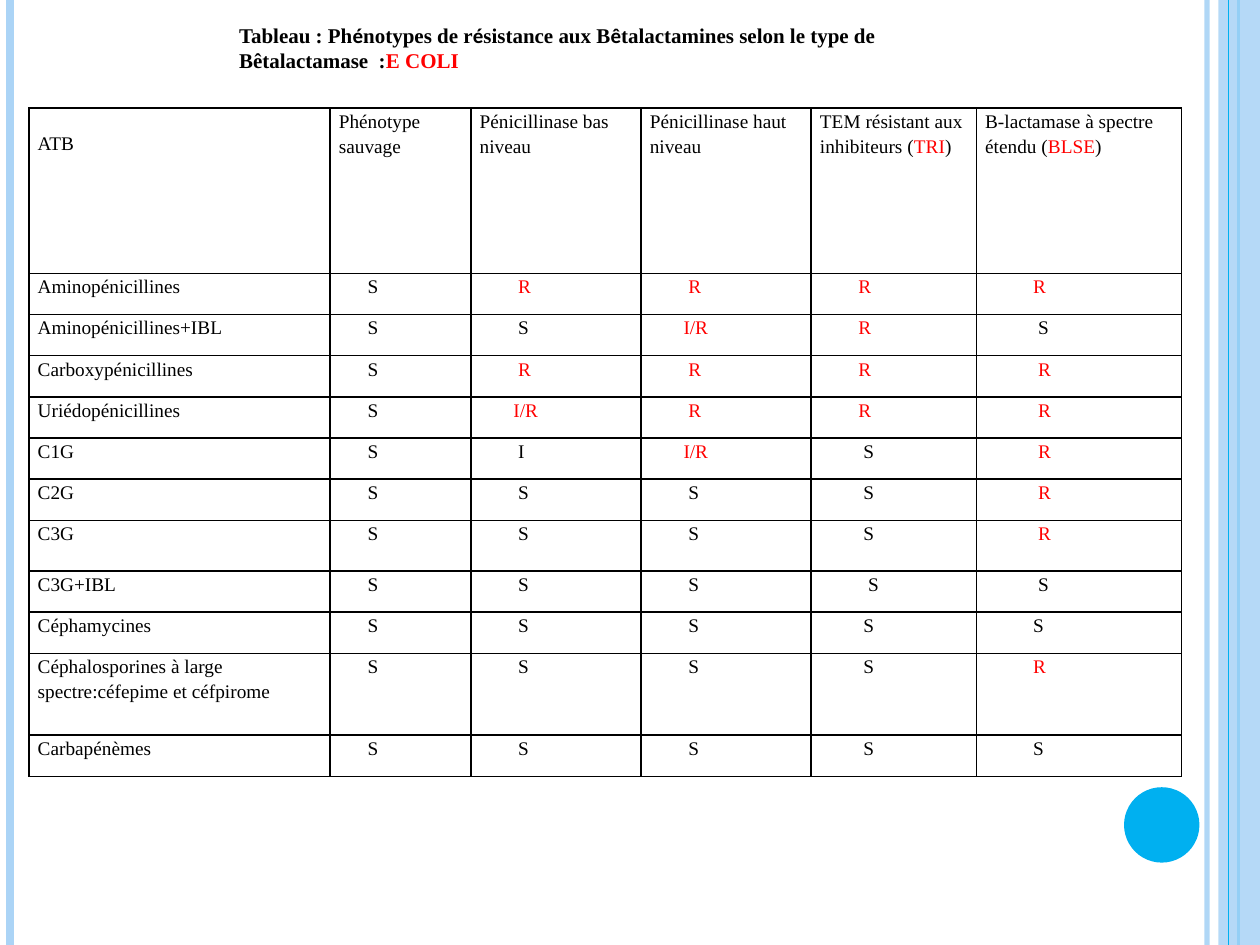
"""Build the slide with the table of E. coli beta-lactam resistance phenotypes."""
from lxml import etree
from pptx import Presentation
from pptx.dml.color import RGBColor
from pptx.enum.shapes import MSO_CONNECTOR, MSO_SHAPE
from pptx.oxml.ns import qn
from pptx.util import Cm, Pt

STRAIGHT = MSO_CONNECTOR.STRAIGHT
RECT, OVAL = MSO_SHAPE.RECTANGLE, MSO_SHAPE.OVAL
BLACK, RED, PALE, CYAN = "000000", "FF0000", "ABD4F6", "00B0F0"
SERIF, SANS = "Times New Roman", "Calibri"
W, H = 25.4, 19.05


def paint(fmt, color, alpha=100):
    fmt.solid()
    fmt.fore_color.rgb = RGBColor.from_string(color)
    if alpha < 100:
        clr = next(fmt._xPr.iter(qn("a:srgbClr")))
        etree.SubElement(clr, qn("a:alpha"), val=str(alpha * 1000))


def add_run(p, text, color=BLACK, **fmt):
    r = p.add_run()
    r.text = text
    paint(r.font.fill, color)
    for name, value in fmt.items():
        setattr(r.font, name, value)


prs = Presentation()
prs.slide_width, prs.slide_height = Cm(W), Cm(H)
s = prs.slides.add_slide(prs.slide_layouts[6])

bands = [
    ("line", 24.33, 3, PALE, 93),
    ("line", 0.2, 4.5, PALE, 100),
    ("line", 24.97, 1.5, CYAN, 100),
    (RECT, (24.56, 0, 0.84, H), 0, PALE, 87),
    ("line", 24.76, 0.75, CYAN, 100),
    (OVAL, (22.66, 15.87, 1.52, 1.52), 0, CYAN, 100),
]
for kind, place, width, color, alpha in bands:
    if kind == "line":
        sp = s.shapes.add_connector(STRAIGHT, Cm(place), 0, Cm(place), Cm(H))
        sp.line.width = Pt(width)
        paint(sp.line.fill, color, alpha)
        etree.SubElement(sp._element.spPr, qn("a:effectLst"))
    else:
        sp = s.shapes.add_shape(kind, *map(Cm, place))
        sp.shadow.inherit = False
        sp.line.fill.background()
        paint(sp.fill, color, alpha)

headers = [
    ["ATB"],
    ["Phénotype sauvage"],
    ["Pénicillinase bas niveau"],
    ["Pénicillinase haut niveau"],
    ["TEM résistant aux inhibiteurs (", "TRI", ")"],
    ["B-lactamase à spectre étendu (", "BLSE", ")"],
]
results = [
    ("Aminopénicillines", "S R R R R", (6, 8, 8, 8, 10)),
    ("Aminopénicillines+IBL", "S S I/R R S", (6, 8, 7, 8, 11)),
    ("Carboxypénicillines", "S R R R R", (6, 8, 8, 8, 11)),
    ("Uriédopénicillines", "S I/R R R R", (6, 7, 8, 8, 11)),
    ("C1G", "S I I/R S R", (6, 8, 7, 9, 11)),
    ("C2G", "S S S S R", (6, 8, 8, 9, 11)),
    ("C3G", "S S S S R", (6, 8, 8, 9, 11)),
    ("C3G+IBL", "S S S S S", (6, 8, 8, 10, 11)),
    ("Céphamycines", "S S S S S", (6, 8, 8, 9, 10)),
    ("Céphalosporines à large spectre:céfepime et céfpirome", "S S S S R", (6, 8, 8, 9, 10)),
    ("Carbapénèmes", "S S S S S", (6, 8, 8, 9, 10)),
]
col_widths = [6.07, 2.84, 3.43, 3.43, 3.33, 4.14]
row_heights = [3.33] + [0.83] * 6 + [1.02, 0.83, 0.83, 1.65, 0.83]

rows = [[(parts, 0) for parts in headers]]
for label, values, steps in results:
    rows.append([([label], 0)] + [([v], n) for v, n in zip(values.split(), steps)])

table = s.shapes.add_table(
    len(rows), len(col_widths), Cm(0.58), Cm(2.18), Cm(sum(col_widths)), Cm(sum(row_heights))
).table
table.first_row = table.horz_banding = False
for col, width in zip(table.columns, col_widths):
    col.width = Cm(width)
for row, height in zip(table.rows, row_heights):
    row.height = Cm(height)

for i, row in enumerate(rows):
    for j, (parts, steps) in enumerate(row):
        cell = table.cell(i, j)
        margins = {
            "margin_left": Cm(0.18 + 0.097 * steps),
            "margin_right": Cm(0.18),
            "margin_top": Cm(0.44 if parts == ["ATB"] else 0),
            "margin_bottom": 0,
        }
        for name, value in margins.items():
            setattr(cell, name, value)
        tcPr = cell._tc.get_or_add_tcPr()
        for side in ("lnL", "lnR", "lnT", "lnB"):
            ln = etree.SubElement(tcPr, qn(f"a:{side}"), w=str(Pt(1)))
            fill = etree.SubElement(ln, qn("a:solidFill"))
            etree.SubElement(fill, qn("a:srgbClr"), val=BLACK)
        cell.fill.background()
        p = cell.text_frame.paragraphs[0]
        p.line_spacing = 1.15
        for text in parts:
            color = RED if text in ("R", "I/R", "TRI", "BLSE") else BLACK
            add_run(p, text, color, size=Pt(11), name=SERIF)

title = [
    ("Tableau : Ph", SERIF, BLACK),
    ("é", SANS, BLACK),
    ("notypes de r", SERIF, BLACK),
    ("é", SANS, BLACK),
    ("sistance aux B", SERIF, BLACK),
    ("ê", SANS, BLACK),
    ("talactamines selon le type de Bêtalactamase  :", SERIF, BLACK),
    ("E COLI", SERIF, RED),
]
tf = s.shapes.add_textbox(Cm(4.57), Cm(0.33), Cm(16.66), Cm(1.8)).text_frame
tf.word_wrap = True
tf.margin_right = Cm(1.27)
for text, font, color in title:
    add_run(tf.paragraphs[0], text, color, size=Pt(12), name=font, bold=True)

prs.save("out.pptx")
